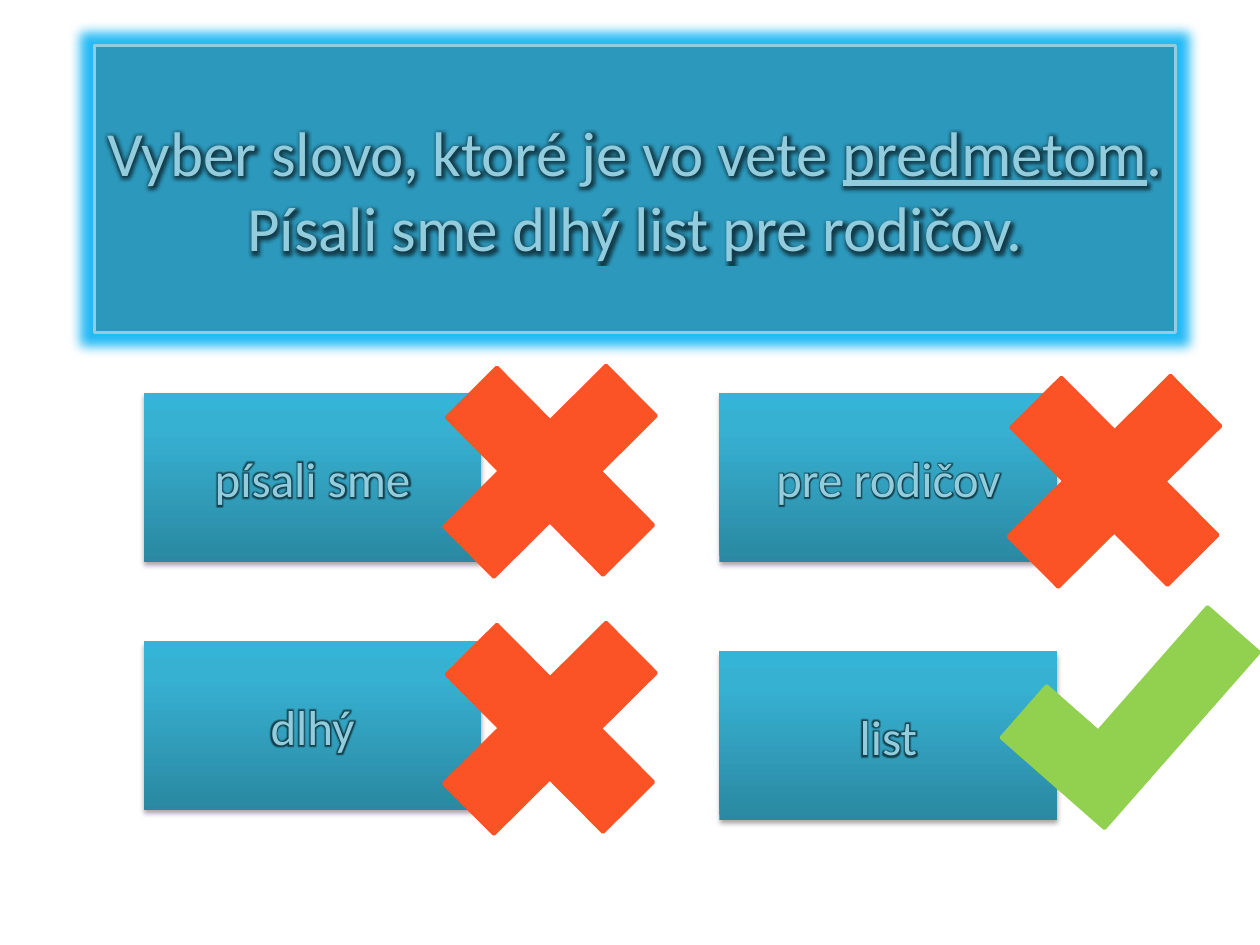
from lxml import etree
from pptx import Presentation
from pptx.dml.color import RGBColor
from pptx.enum.shapes import MSO_SHAPE
from pptx.enum.text import MSO_ANCHOR, PP_ALIGN
from pptx.oxml import parse_xml
from pptx.oxml.ns import nsdecls, qn
from pptx.util import Inches, Pt

COLORS = {
    "question": "31859C", "text": "93CDDD", "glow": "26BAF5", "halo": "000000",
    "top": "34B4D6", "middle": "37B1D2", "bottom": "2A88A2",
    "wrong": "FB5325", "right": "92D050",
}
# Each line is a list of (text, underlined)
QUESTION = [
    [("Vyber slovo, ktoré je vo vete ", False), ("predmetom", True), (".", False)],
    [("Písali sme dlhý list pre rodičov.", False)],
]
QUESTION_BOX = (0.75, 0.36, 8.58, 2.28)
ANSWER_SIZE = (2.68, 1.34)
ANSWERS = [  # text, left, top
    ("písali sme", 1.14, 3.12),
    ("pre rodičov", 5.71, 3.12),
    ("dlhý", 1.14, 5.09),
    ("list", 5.71, 5.17),
]
CROSS_SIZE = (2.47, 2.4)
CROSSES = [(3.13, 2.54), (3.13, 4.58), (7.61, 2.62)]
CHECK_BOX = (8.04, 4.97, 1.86, 1.09)


def rgb(name):
    return RGBColor.from_string(COLORS[name])


def drawing(tag, content):
    return parse_xml(f'<a:{tag} {nsdecls("a")}>{content}</a:{tag}>')


def color_xml(name, alpha=100):
    return f'<a:srgbClr val="{COLORS[name]}"><a:alpha val="{alpha * 1000}"/></a:srgbClr>'


def glow_xml(name, radius, alpha=100):
    return f'<a:glow rad="{Pt(radius)}">{color_xml(name, alpha)}</a:glow>'


def write(shape, lines, size):
    """Centre the lines in the shape as outlined letters with a dark halo."""
    frame = shape.text_frame
    frame.word_wrap = True
    frame.vertical_anchor = MSO_ANCHOR.MIDDLE
    for index, line in enumerate(lines):
        paragraph = frame.add_paragraph() if index else frame.paragraphs[0]
        paragraph.alignment = PP_ALIGN.CENTER
        for text, underlined in line:
            run = paragraph.add_run()
            run.text = text
            properties = run.font._element
            outline = drawing("ln", f'<a:solidFill>{color_xml("text")}</a:solidFill>')
            outline.set("w", str(Pt(0.75)))
            properties.append(outline)
            properties.append(drawing("effectLst", glow_xml("halo", 4, 60)))
            style = {"name": "Calibri", "size": Pt(size), "underline": underlined}
            for attribute, value in style.items():
                setattr(run.font, attribute, value)
            run.font.color.rgb = rgb("text")


def add_question(slide):
    title = slide.shapes.title
    for side, value in zip(("left", "top", "width", "height"), QUESTION_BOX):
        setattr(title, side, Inches(value))
    title.fill.solid()
    title.fill.fore_color.rgb = rgb("question")
    fill_color = title._element.spPr.find(f'{qn("a:solidFill")}/{qn("a:srgbClr")}')
    etree.SubElement(fill_color, qn("a:alpha")).set("val", "63000")
    title.line.color.rgb = rgb("text")
    title.line.width = Pt(2)
    title._element.spPr.append(drawing("effectLst", glow_xml("glow", 13)))
    write(title, QUESTION, 36)


def add_answer(slide, text, left, top):
    answer = slide.shapes.add_shape(
        MSO_SHAPE.RECTANGLE, *map(Inches, (left, top, *ANSWER_SIZE)))
    answer.line.fill.background()
    stops = "".join(
        f'<a:gs pos="{position * 1000}">{color_xml(name)}</a:gs>'
        for position, name in ((0, "bottom"), (80, "middle"), (100, "top")))
    gradient = drawing("gradFill", f'<a:gsLst>{stops}</a:gsLst><a:lin ang="16200000"/>')
    properties = answer._element.spPr
    properties.find(qn("a:ln")).addprevious(gradient)
    properties.append(drawing(
        "effectLst",
        f'<a:outerShdw blurRad="{Pt(3.1)}" dist="{Pt(1.8)}" dir="5400000">'
        f'{color_xml("halo", 35)}</a:outerShdw>'))
    write(answer, [[(text, False)]], 28)


def add_mark(slide, kind, box, rotation, color):
    mark = slide.shapes.add_shape(kind, *map(Inches, box))
    mark.rotation = rotation
    mark.shadow.inherit = False
    mark.fill.solid()
    mark.fill.fore_color.rgb = rgb(color)
    mark.line.color.rgb = rgb(color)
    mark.line.width = Pt(2)


def main():
    presentation = Presentation()
    presentation.slide_width, presentation.slide_height = Inches(10), Inches(7.5)
    slide = presentation.slides.add_slide(presentation.slide_layouts[5])
    add_question(slide)
    for answer in ANSWERS:
        add_answer(slide, *answer)
    for position in CROSSES:
        add_mark(slide, MSO_SHAPE.MATH_PLUS, (*position, *CROSS_SIZE), 315.2, "wrong")
    add_mark(slide, MSO_SHAPE.CORNER, CHECK_BOX, 311.3, "right")
    presentation.save("out.pptx")


if __name__ == "__main__":
    main()
